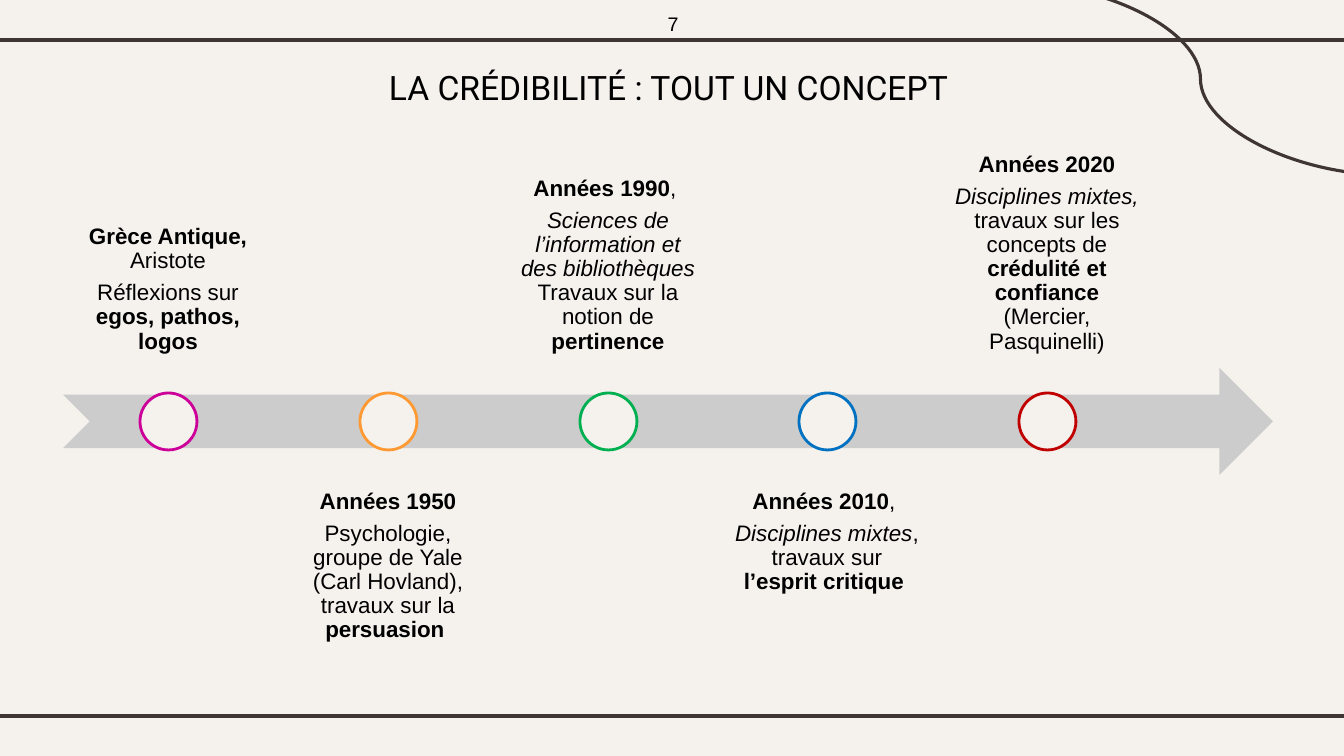
"""Build the timeline slide on the concept of credibility."""
from dataclasses import dataclass

from lxml.etree import SubElement
from pptx import Presentation
from pptx.dml.color import RGBColor
from pptx.enum.shapes import MSO_CONNECTOR as Connector, MSO_SHAPE as Shape
from pptx.enum.text import MSO_ANCHOR as Anchor, PP_ALIGN as Align
from pptx.oxml.ns import qn
from pptx.slide import Slide
from pptx.text.text import TextFrame
from pptx.util import Emu, Pt

COLORS = {
    "paper": "F5F2EE", "rule": "3F3533", "arrow": "CCCCCC", "text": "000000",
    "magenta": "CC0099", "orange": "FF9933", "green": "00B050",
    "blue": "0070C0", "red": "C00000",
}
PX_PER_INCH = 100.8
FIRST_CENTER, LAST_CENTER = 168, 1047
LABEL_WIDTH, LABEL_HEIGHT, LABEL_INSET = 210, 225, 12
ABOVE_TOP, BELOW_TOP = 141, 478
DOT_TOP, DOT_SIZE = 393, 57


@dataclass(frozen=True)
class Span:
    text: str
    bold: bool = False
    italic: bool = False


@dataclass(frozen=True)
class Milestone:
    color: str
    paragraphs: list[list[Span]]


@dataclass(frozen=True)
class Rule:
    kind: Connector
    start: tuple[int, int]
    end: tuple[int, int]


RULES = [
    Rule(Connector.STRAIGHT, (-11, 40), (1355, 40)),
    Rule(Connector.STRAIGHT, (-11, 716), (1355, 716)),
    Rule(Connector.CURVE, (1012, -17), (1389, 175)),
]

MILESTONES = [
    Milestone("magenta", [
        [Span("Grèce Antique, ", bold=True), Span("Aristote")],
        [Span("Réflexions sur "), Span("egos, pathos, logos", bold=True)],
    ]),
    Milestone("orange", [
        [Span("Années 1950", bold=True)],
        [Span("Psychologie, groupe de Yale (Carl Hovland), travaux sur la "),
         Span("persuasion ", bold=True)],
    ]),
    Milestone("green", [
        [Span("Années 1990", bold=True), Span(", ")],
        [Span("Sciences de l’information et des bibliothèques ", italic=True),
         Span("Travaux sur la notion de "), Span("pertinence", bold=True)],
    ]),
    Milestone("blue", [
        [Span("Années 2010", bold=True), Span(", ")],
        [Span("Disciplines mixtes", italic=True), Span(", travaux sur "),
         Span("l’esprit critique ", bold=True)],
    ]),
    Milestone("red", [
        [Span("Années 2020", bold=True)],
        [Span("Disciplines mixtes,", italic=True),
         Span(" travaux sur les concepts de "),
         Span("crédulité et confiance ", bold=True),
         Span("(Mercier, Pasquinelli)")],
    ]),
]


def px(length: int) -> Emu:
    return Emu(round(length * 914400 / PX_PER_INCH))


def color(name: str) -> RGBColor:
    return RGBColor.from_string(COLORS[name])


def set_frame(frame: TextFrame, inset: int, anchor: Anchor) -> None:
    frame.word_wrap = True
    frame.vertical_anchor = anchor
    frame.margin_left = frame.margin_right = px(inset)
    frame.margin_top = frame.margin_bottom = px(inset)


def set_line(frame: TextFrame, text: str, size: int, font: str) -> None:
    frame.text = text
    para = frame.paragraphs[0]
    para.alignment = Align.CENTER
    run_font = para.runs[0].font
    run_font.size, run_font.name = Pt(size), font
    run_font.color.rgb = color("text")


def draw_rule(page: Slide, rule: Rule) -> None:
    connector = page.shapes.add_connector(
        rule.kind, *map(px, rule.start + rule.end))
    connector.line.color.rgb = color("rule")
    connector.line.width = Pt(2.25)
    SubElement(connector._element.spPr, qn("a:effectLst"))


def draw_shape(page: Slide, kind: Shape, place: tuple[int, int, int, int],
               fill: str, outline: str | None = None) -> None:
    shape = page.shapes.add_shape(kind, *map(px, place))
    shape.shadow.inherit = False
    shape.fill.solid()
    shape.fill.fore_color.rgb = color(fill)
    if outline:
        shape.line.color.rgb = color(outline)
        shape.line.width = Pt(2)
    else:
        shape.line.fill.background()


def draw_label(page: Slide, milestone: Milestone, center: int, above: bool) -> None:
    top = ABOVE_TOP if above else BELOW_TOP
    box = page.shapes.add_textbox(*map(
        px, (center - LABEL_WIDTH // 2, top, LABEL_WIDTH, LABEL_HEIGHT)))
    frame = box.text_frame
    set_frame(frame, LABEL_INSET, Anchor.BOTTOM if above else Anchor.TOP)
    for index, spans in enumerate(milestone.paragraphs):
        para = frame.add_paragraph() if index else frame.paragraphs[0]
        para.alignment = Align.CENTER
        para.line_spacing = 0.9
        para.space_after = Pt(5.6)
        for span in spans:
            run = para.add_run()
            run.text = span.text
            run.font.name, run.font.size = "Arial", Pt(16)
            run.font.bold, run.font.italic = span.bold, span.italic
            run.font.color.rgb = color("text")


def draw_timeline(page: Slide) -> None:
    draw_shape(page, Shape.NOTCHED_RIGHT_ARROW, (63, 368, 1210, 107), "arrow")
    step = (LAST_CENTER - FIRST_CENTER) / (len(MILESTONES) - 1)
    for index, milestone in enumerate(MILESTONES):
        center = round(FIRST_CENTER + index * step)
        draw_label(page, milestone, center, above=index % 2 == 0)
        place = (center - DOT_SIZE // 2, DOT_TOP, DOT_SIZE, DOT_SIZE)
        draw_shape(page, Shape.OVAL, place, "paper", milestone.color)


def draw_title(page: Slide) -> None:
    title = page.shapes.title
    title.left, title.top, title.width, title.height = map(px, (89, 57, 1159, 85))
    set_frame(title.text_frame, 10, Anchor.TOP)
    set_line(title.text_frame, "LA CRÉDIBILITÉ : TOUT UN CONCEPT", 24, "Roboto")


def draw_page_number(page: Slide) -> None:
    box = page.shapes.add_textbox(*map(px, (643, 8, 60, 32)))
    set_frame(box.text_frame, 0, Anchor.MIDDLE)
    set_line(box.text_frame, "7", 14, "Arial")


def main() -> None:
    deck = Presentation()
    deck.slide_width, deck.slide_height = px(1344), px(756)
    page = deck.slides.add_slide(deck.slide_layouts[5])
    page.background.fill.solid()
    page.background.fill.fore_color.rgb = color("paper")
    for rule in RULES:
        draw_rule(page, rule)
    draw_title(page)
    draw_timeline(page)
    draw_page_number(page)
    deck.save("out.pptx")


if __name__ == "__main__":
    main()
